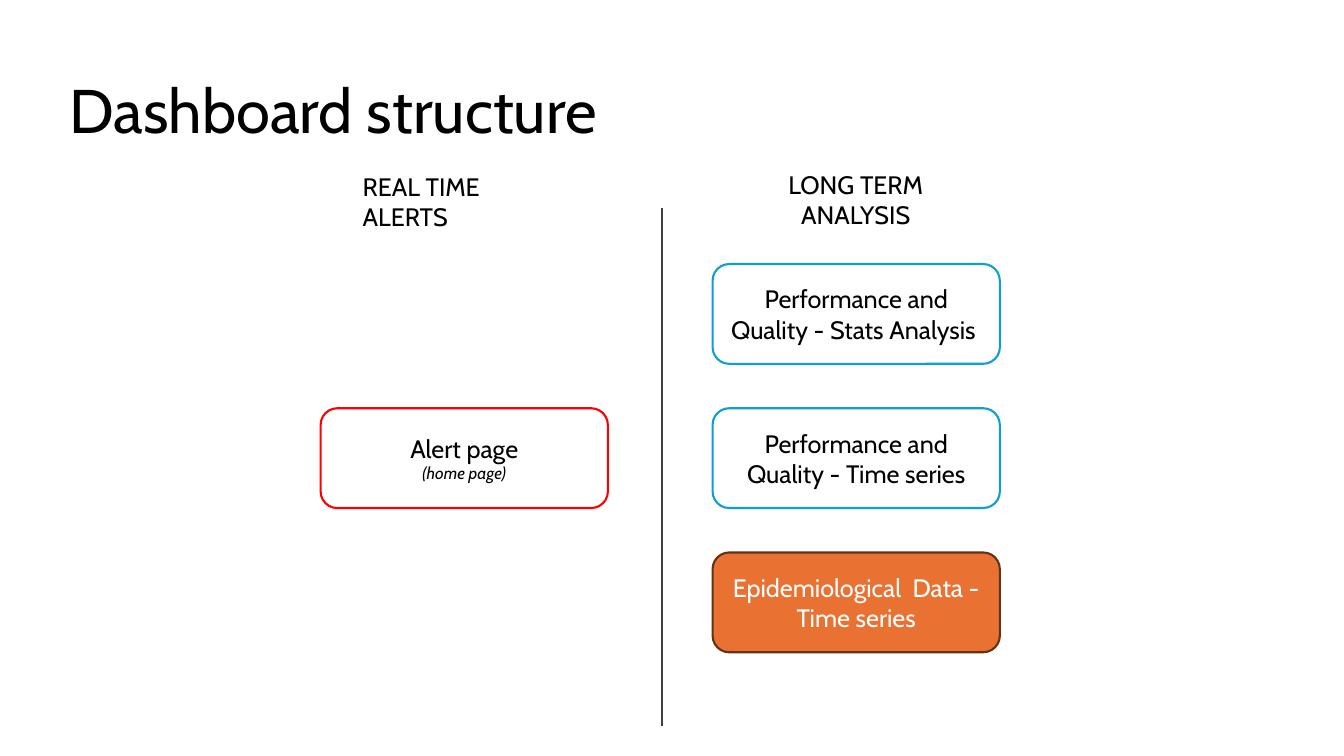
from lxml import etree
from pptx import Presentation
from pptx.dml.color import RGBColor
from pptx.enum.shapes import MSO_CONNECTOR, MSO_SHAPE
from pptx.enum.text import MSO_ANCHOR, MSO_AUTO_SIZE, PP_ALIGN
from pptx.oxml.ns import qn
from pptx.util import Pt

BLACK = RGBColor(0x00, 0x00, 0x00)
WHITE = RGBColor(0xFF, 0xFF, 0xFF)
RED = RGBColor(0xFF, 0x00, 0x00)
BLUE = RGBColor(0x0F, 0x9E, 0xD5)
ORANGE = RGBColor(0xE9, 0x71, 0x32)
BROWN = RGBColor(0x66, 0x32, 0x16)
GREY = RGBColor(0x40, 0x40, 0x40)

PAGE_W, PAGE_H = 205.2, 71.3
ALERT_LEFT, ANALYSIS_LEFT = 229, 509
FIRST_TOP, ROW_STEP = 188.6, 103

prs = Presentation()
prs.slide_width, prs.slide_height = Pt(960), Pt(540)
slide = prs.slides.add_slide(prs.slide_layouts[6])


def write(paragraph, text, size, color=BLACK, align=PP_ALIGN.LEFT):
    paragraph.text = text
    paragraph.alignment = align
    paragraph.font.name = "Cabin"
    paragraph.font.size = Pt(size)
    paragraph.font.color.rgb = color


def add_page(left, row, text, fill, border, color=BLACK):
    """Draw one dashboard page as a rounded box and return its text frame."""
    page = slide.shapes.add_shape(
        MSO_SHAPE.ROUNDED_RECTANGLE,
        Pt(left), Pt(FIRST_TOP + row * ROW_STEP), Pt(PAGE_W), Pt(PAGE_H))
    page.shadow.inherit = False
    page.fill.solid()
    page.fill.fore_color.rgb = fill
    page.line.color.rgb = border
    page.line.width = Pt(1.5)
    frame = page.text_frame
    frame.word_wrap = True
    frame.vertical_anchor = MSO_ANCHOR.MIDDLE
    write(frame.paragraphs[0], text, 18, color, PP_ALIGN.CENTER)
    return frame


title = slide.shapes.add_textbox(Pt(42.5), Pt(28.8), Pt(758), Pt(104.4)).text_frame
title.word_wrap = True
title.vertical_anchor = MSO_ANCHOR.MIDDLE
write(title.paragraphs[0], "Dashboard structure", 44)
title.paragraphs[0].line_spacing = 0.9

alert_page = add_page(ALERT_LEFT, 1, "Alert page", WHITE, RED)
home_note = alert_page.add_paragraph()
write(home_note, "(home page)", 12, align=PP_ALIGN.CENTER)
home_note.font.italic = True

analysis_pages = [
    ("Performance and Quality - Stats Analysis ", WHITE, BLUE, BLACK),
    ("Performance and Quality - Time series", WHITE, BLUE, BLACK),
    ("Epidemiological  Data - Time series", ORANGE, BROWN, WHITE),
]
for row, (text, fill, border, color) in enumerate(analysis_pages):
    add_page(ANALYSIS_LEFT, row, text, fill, border, color)

divider = slide.shapes.add_connector(
    MSO_CONNECTOR.STRAIGHT, Pt(473), Pt(148.3), Pt(473), Pt(518.4))
divider.line.color.rgb = GREY
divider.line.width = Pt(1.5)
etree.SubElement(divider.element.spPr, qn("a:effectLst"))

headings = [
    ("REAL TIME ALERTS", 252, 118.8, 159.8, PP_ALIGN.LEFT),
    ("LONG TERM ANALYSIS", 522.7, 117.4, 177.1, PP_ALIGN.CENTER),
]
for text, left, top, width, align in headings:
    heading = slide.shapes.add_textbox(Pt(left), Pt(top), Pt(width), Pt(29)).text_frame
    heading.word_wrap = True
    heading.auto_size = MSO_AUTO_SIZE.SHAPE_TO_FIT_TEXT
    write(heading.paragraphs[0], text, 18, align=align)

prs.save("out.pptx")
